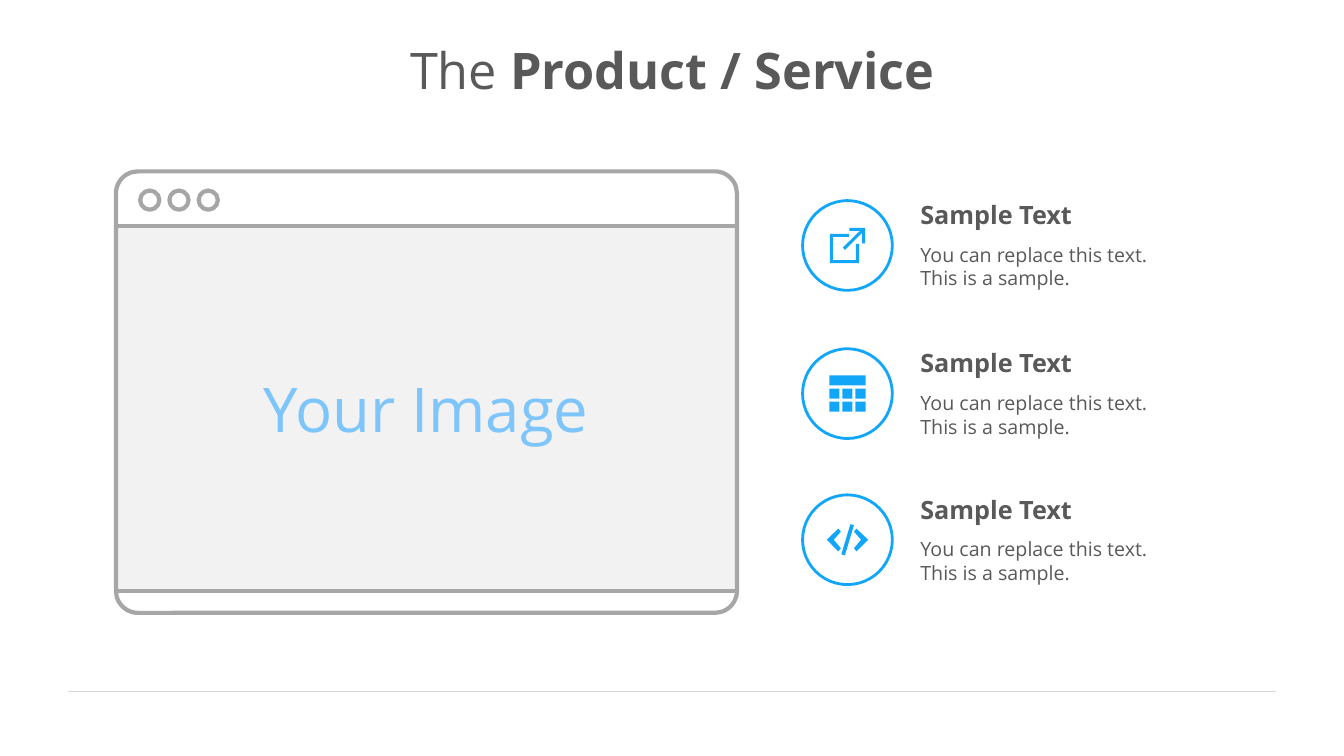
from dataclasses import dataclass

from pptx import Presentation
from pptx.dml.color import RGBColor
from pptx.enum.shapes import MSO_CONNECTOR, MSO_SHAPE
from pptx.enum.text import MSO_ANCHOR, MSO_AUTO_SIZE, PP_ALIGN
from pptx.oxml.ns import qn
from pptx.util import Inches, Pt


@dataclass(frozen=True)
class Theme:
    """Colours, type sizes and the font of the slide."""

    font: str = "Open Sans"
    text: RGBColor = RGBColor(0x59, 0x59, 0x59)
    accent: RGBColor = RGBColor(0x12, 0xA6, 0xF8)
    hint: RGBColor = RGBColor(0x7D, 0xC5, 0xFB)
    frame: RGBColor = RGBColor(0xA6, 0xA6, 0xA6)
    panel: RGBColor = RGBColor(0xF2, 0xF2, 0xF2)
    rule: RGBColor = RGBColor(0xD8, 0xD8, 0xD8)
    title_size: int = 36
    hint_size: int = 44
    heading_size: int = 18
    body_size: int = 14


THEME = Theme()
WINDOW_LEFT, WINDOW_WIDTH = 1.15, 6.16
PANEL_TOP, PANEL_HEIGHT = 2.24, 3.62
CIRCLE_LEFT, CIRCLE_SIZE = 7.96, 0.89
TEXT_LEFT, TEXT_WIDTH = 9.03, 3.15
HEADING = "Sample Text"
BODY = ("You can replace this text.", "This is a sample.")

# Icon outlines are in thousandths of an inch from the circle's centre.
ARROW = ((20, -175), (175, -175), (175, -20), (145, -20), (145, -125),
         (-25, 45), (-45, 20), (125, -145), (20, -145))
OPEN_SQUARE = ((15, -115), (-175, -115), (-175, 175), (115, 175), (115, -15),
               (85, -15), (85, 145), (-145, 145), (-145, -85), (15, -85))
CHEVRON = ((90, -110), (205, 0), (90, 115), (65, 85), (135, 0), (65, -80))
SLASH = ((30, -155), (65, -145), (-25, 155), (-60, 145))


def add_span(para, text, size, colour=THEME.text, bold=False):
    """Add one formatted run to a paragraph."""
    span = para.add_run()
    span.text = text
    values = {"name": THEME.font, "size": Pt(size), "bold": bold}
    for name, value in values.items():
        setattr(span.font, name, value)
    span.font.color.rgb = colour


def paint(shape, fill=None, line=None, weight=0):
    """Set the fill and outline of a shape and remove its shadow."""
    shape.shadow.inherit = False
    if fill is None:
        shape.fill.background()
    else:
        shape.fill.solid()
        shape.fill.fore_color.rgb = fill
    if line is None:
        shape.line.fill.background()
    else:
        shape.line.color.rgb = line
        shape.line.width = Pt(weight)


def add_preset(page, kind, left, top, width, height, **look):
    """Add a painted preset shape."""
    shape = page.shapes.add_shape(
        kind, Inches(left), Inches(top), Inches(width), Inches(height))
    paint(shape, **look)
    return shape


def add_rule(page, left, top, width, colour, weight):
    """Add a horizontal line."""
    rule = page.shapes.add_connector(
        MSO_CONNECTOR.STRAIGHT, Inches(left), Inches(top),
        Inches(left + width), Inches(top))
    rule.line.color.rgb = colour
    rule.line.width = Pt(weight)
    properties = rule._element.spPr
    properties.append(properties.makeelement(qn("a:effectLst"), {}))


def add_text(page, top, height, lines, size, bold=False):
    """Add a text box with one paragraph for each line."""
    box = page.shapes.add_textbox(
        Inches(TEXT_LEFT), Inches(top), Inches(TEXT_WIDTH), Inches(height))
    frame = box.text_frame
    frame.word_wrap = True
    frame.auto_size = MSO_AUTO_SIZE.SHAPE_TO_FIT_TEXT
    for index, line in enumerate(lines):
        para = frame.add_paragraph() if index else frame.paragraphs[0]
        add_span(para, line, size, bold=bold)


def add_outline(page, centre_x, centre_y, points):
    """Add a filled icon outline placed around a centre."""
    corners = [(Inches(centre_x + x / 1000), Inches(centre_y + y / 1000))
               for x, y in points]
    builder = page.shapes.build_freeform(*corners[0])
    builder.add_line_segments(corners[1:], close=True)
    paint(builder.convert_to_shape(), fill=THEME.accent)


def add_link_icon(page, x, y):
    """Draw an arrow leaving an open square."""
    for points in (ARROW, OPEN_SQUARE):
        add_outline(page, x, y, points)


def add_table_icon(page, x, y):
    """Draw a header bar over a grid of cells."""
    left, cell, pitch = x - 0.18, 0.1, 0.13
    bars = [(left, y - 0.18, 0.36)]
    bars += [(left + column * pitch, y - 0.05 + row * pitch, cell)
             for row in range(2) for column in range(3)]
    for bar_left, top, width in bars:
        add_preset(page, MSO_SHAPE.RECTANGLE, bar_left, top, width, cell,
                   fill=THEME.accent)


def add_code_icon(page, x, y):
    """Draw two mirrored chevrons around a slash."""
    mirrored = [(-across, down) for across, down in CHEVRON]
    for points in (CHEVRON, mirrored, SLASH):
        add_outline(page, x, y, points)


def add_feature(page, top, draw_icon):
    """Add a circled icon with its heading and body text."""
    add_text(page, top + 0.37, 0.57, BODY, THEME.body_size)
    add_text(page, top - 0.06, 0.4, [HEADING], THEME.heading_size, bold=True)
    add_preset(page, MSO_SHAPE.OVAL, CIRCLE_LEFT, top, CIRCLE_SIZE,
               CIRCLE_SIZE, line=THEME.accent, weight=2)
    draw_icon(page, CIRCLE_LEFT + CIRCLE_SIZE / 2, top + CIRCLE_SIZE / 2)


def add_window(page):
    """Draw the browser window with its image panel."""
    panel = add_preset(page, MSO_SHAPE.RECTANGLE, WINDOW_LEFT, PANEL_TOP,
                       WINDOW_WIDTH, PANEL_HEIGHT, fill=THEME.panel)
    panel.text_frame.vertical_anchor = MSO_ANCHOR.MIDDLE
    para = panel.text_frame.paragraphs[0]
    para.alignment = PP_ALIGN.CENTER
    add_span(para, "Your Image", THEME.hint_size, THEME.hint)
    outline = {"line": THEME.frame, "weight": 3}
    window = add_preset(page, MSO_SHAPE.ROUNDED_RECTANGLE, WINDOW_LEFT, 1.7,
                        WINDOW_WIDTH, 4.38, **outline)
    window.adjustments[0] = 0.05
    for top in (PANEL_TOP, PANEL_TOP + PANEL_HEIGHT):
        add_rule(page, WINDOW_LEFT, top, WINDOW_WIDTH, THEME.frame, 3)
    for index in range(3):
        add_preset(page, MSO_SHAPE.OVAL, 1.39 + index * 0.29, 1.89,
                   0.19, 0.19, **outline)


def set_title(page):
    """Place and format the slide title."""
    title = page.shapes.title
    place = {"left": 0.67, "top": 0.3, "width": 12, "height": 0.78}
    for name, value in place.items():
        setattr(title, name, Inches(value))
    frame = title.text_frame
    values = {"margin_left": Inches(0.13), "margin_right": Inches(0.13),
              "margin_top": Inches(0.07), "margin_bottom": Inches(0.07),
              "vertical_anchor": MSO_ANCHOR.MIDDLE, "word_wrap": True,
              "auto_size": MSO_AUTO_SIZE.NONE}
    for name, value in values.items():
        setattr(frame, name, value)
    para = frame.paragraphs[0]
    para.alignment = PP_ALIGN.CENTER
    add_span(para, "The ", THEME.title_size)
    add_span(para, "Product / Service", THEME.title_size, bold=True)


def main():
    """Build the slide and save it."""
    deck = Presentation()
    deck.slide_width, deck.slide_height = Inches(13.33), Inches(7.5)
    page = deck.slides.add_slide(deck.slide_layouts.get_by_name("Title Only"))
    set_title(page)
    add_rule(page, 0.67, 6.86, 11.99, THEME.rule, 0.75)
    add_window(page)
    features = ((1.99, add_link_icon), (3.46, add_table_icon),
                (4.91, add_code_icon))
    for top, draw_icon in features:
        add_feature(page, top, draw_icon)
    deck.save("out.pptx")


if __name__ == "__main__":
    main()
